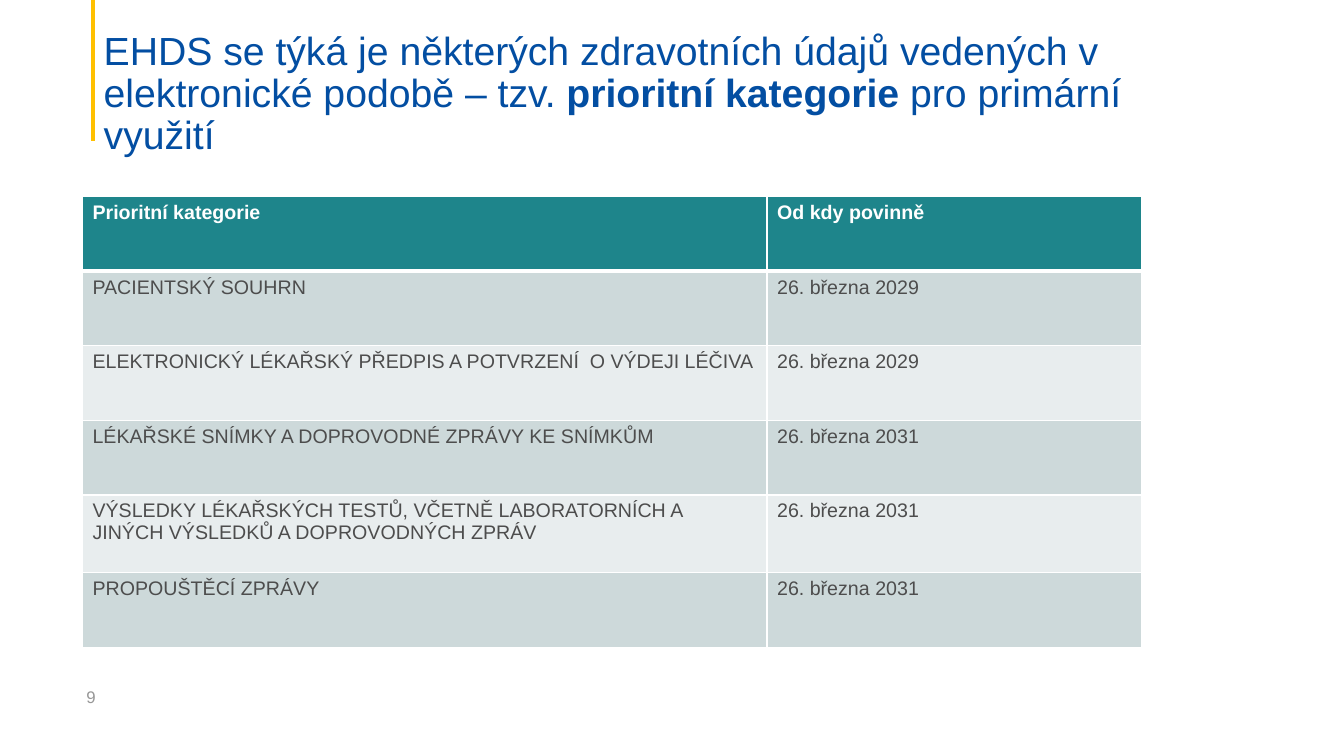
"""Build a slide with the priority categories of health data and their deadlines."""
from lxml.etree import SubElement
from pptx import Presentation
from pptx.dml.color import RGBColor
from pptx.enum.shapes import MSO_CONNECTOR
from pptx.enum.text import MSO_ANCHOR
from pptx.oxml.ns import qn
from pptx.util import Pt

COLORS = {
    "accent": "FFC000",
    "title": "034EA2",
    "number": "979797",
    "header": "1E858B",
    "dark_band": "CDD9DA",
    "light_band": "E8EDEE",
    "text": "4D4D4D",
    "white": "FFFFFF",
}
ROWS = [
    ("Prioritní kategorie", "Od kdy povinně"),
    ("PACIENTSKÝ SOUHRN", "26. března 2029"),
    ("ELEKTRONICKÝ LÉKAŘSKÝ PŘEDPIS A POTVRZENÍ  O VÝDEJI LÉČIVA", "26. března 2029"),
    ("LÉKAŘSKÉ SNÍMKY A DOPROVODNÉ ZPRÁVY KE SNÍMKŮM", "26. března 2031"),
    ("VÝSLEDKY LÉKAŘSKÝCH TESTŮ, VČETNĚ LABORATORNÍCH A JINÝCH VÝSLEDKŮ "
     "A DOPROVODNÝCH ZPRÁV", "26. března 2031"),
    ("PROPOUŠTĚCÍ ZPRÁVY", "26. března 2031"),
]
COLUMN_WIDTHS = [489, 267.7]
ROW_HEIGHTS = [53.3, 53.3, 53.3, 53.3, 55.5, 53.3]


def color(name):
    return RGBColor.from_string(COLORS[name])


def set_font(paragraph, size, color_name, bold=False):
    paragraph.font.name = "Arial"
    paragraph.font.size = Pt(size)
    paragraph.font.bold = bold
    paragraph.font.color.rgb = color(color_name)


presentation = Presentation()
presentation.slide_width = Pt(960)
presentation.slide_height = Pt(540)
slide = presentation.slides.add_slide(presentation.slide_layouts[6])

accent_line = slide.shapes.add_connector(
    MSO_CONNECTOR.STRAIGHT, Pt(66.4), Pt(0), Pt(66.4), Pt(100.8))
accent_line.line.color.rgb = color("accent")
accent_line.line.width = Pt(2.25)
SubElement(accent_line._element.spPr, qn("a:effectLst"))

number_box = slide.shapes.add_textbox(Pt(54.7), Pt(483), Pt(216), Pt(28.8))
number_box.text_frame.word_wrap = True
number_box.text_frame.vertical_anchor = MSO_ANCHOR.MIDDLE
number_box.text_frame.text = "9"
set_font(number_box.text_frame.paragraphs[0], 12, "number")

title_box = slide.shapes.add_textbox(Pt(67), Pt(51), Pt(820), Pt(62))
title_frame = title_box.text_frame
title_frame.word_wrap = True
title_frame.vertical_anchor = MSO_ANCHOR.BOTTOM
title_frame.margin_bottom = Pt(0)
title = title_frame.paragraphs[0]
title.line_spacing = 0.9
set_font(title, 28, "title")
for text, bold in [
    ("EHDS se týká je některých zdravotních údajů vedených v elektronické podobě – tzv. ", False),
    ("prioritní kategorie ", True),
    ("pro primární využití", False),
]:
    run = title.add_run()
    run.text = text
    run.font.bold = bold

table = slide.shapes.add_table(
    len(ROWS), len(COLUMN_WIDTHS), Pt(58.9), Pt(140.4),
    Pt(sum(COLUMN_WIDTHS)), Pt(sum(ROW_HEIGHTS))).table
for column, width in zip(table.columns, COLUMN_WIDTHS):
    column.width = Pt(width)
for row_index, (texts, height) in enumerate(zip(ROWS, ROW_HEIGHTS)):
    table.rows[row_index].height = Pt(height)
    is_header = row_index == 0
    band = "header" if is_header else "dark_band" if row_index % 2 else "light_band"
    for column_index, text in enumerate(texts):
        cell = table.cell(row_index, column_index)
        cell.text = text
        set_font(cell.text_frame.paragraphs[0], 14,
                 "white" if is_header else "text", is_header)
        properties = cell._tc.get_or_add_tcPr()
        for side in ("lnL", "lnR", "lnT", "lnB"):
            thick = (row_index, side) in [(0, "lnB"), (1, "lnT")]
            border = SubElement(properties, qn(f"a:{side}"), w=str(Pt(3 if thick else 1)))
            border_fill = SubElement(border, qn("a:solidFill"))
            SubElement(border_fill, qn("a:srgbClr"), val=COLORS["white"])
        cell.fill.solid()
        cell.fill.fore_color.rgb = color(band)

presentation.save("out.pptx")
